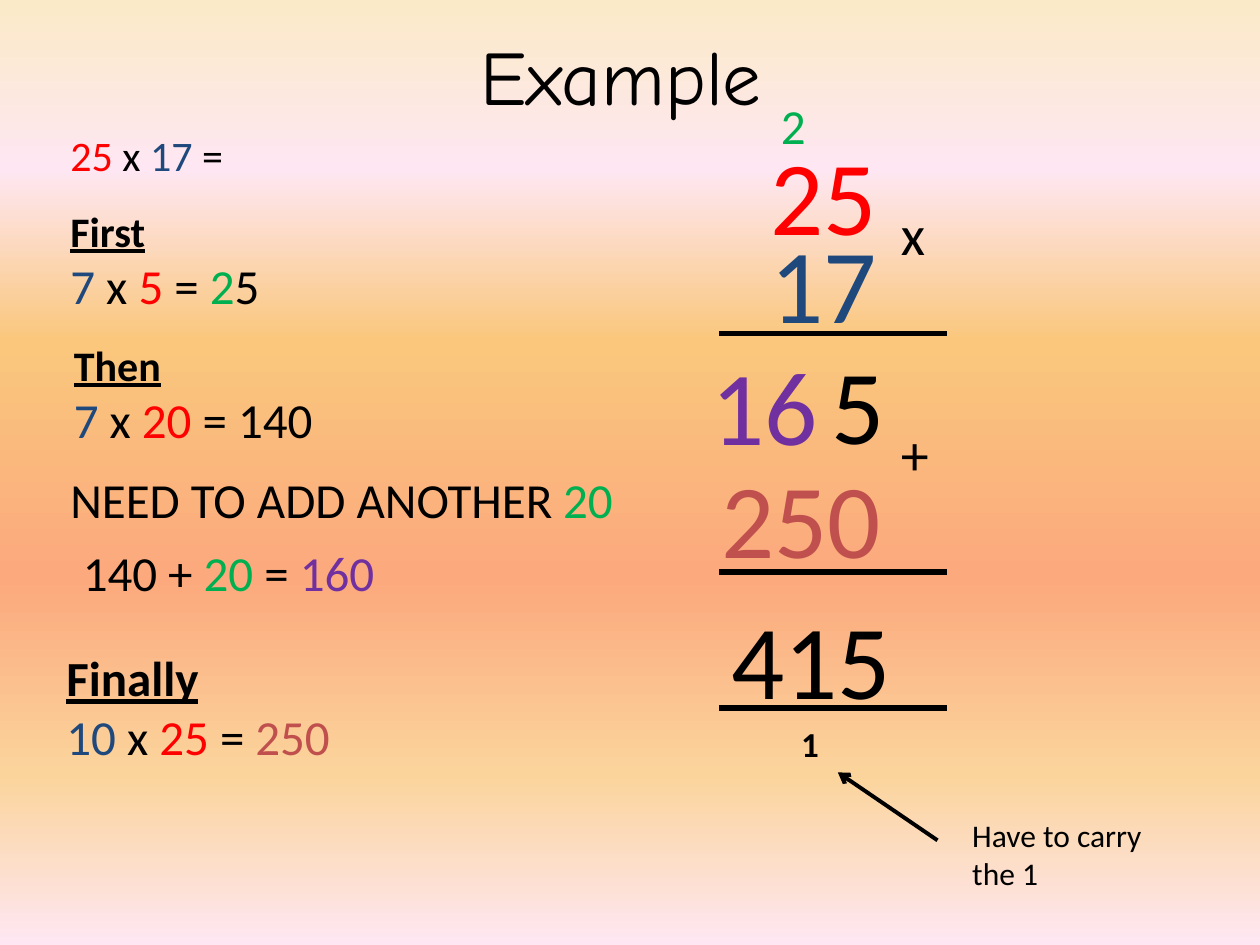
from dataclasses import dataclass

from lxml import etree
from pptx import Presentation
from pptx.dml.color import RGBColor
from pptx.enum.shapes import MSO_CONNECTOR
from pptx.enum.text import MSO_ANCHOR, MSO_AUTO_SIZE, PP_ALIGN
from pptx.oxml.ns import qn
from pptx.slide import Slide
from pptx.util import Cm, Pt

STRAIGHT = MSO_CONNECTOR.STRAIGHT
MIDDLE = MSO_ANCHOR.MIDDLE
CENTER = PP_ALIGN.CENTER
GROW = MSO_AUTO_SIZE.SHAPE_TO_FIT_TEXT

FONT = "Calibri"
COLORS = {
    "black": "000000",
    "red": "FF0000",
    "blue": "1F497D",
    "green": "00B050",
    "purple": "7030A0",
    "brick": "C0504D",
}
SKY = {0: "FBEAC7", 18: "FEE7F2", 36: "FAC77D", 61: "FBA97D", 82: "FBD49C", 100: "FEE7F2"}


@dataclass
class Label:
    """Text box in cm; runs pair a text with a colour name."""
    left: float
    top: float
    width: float
    height: float
    size: int
    runs: list[tuple[str, str]]
    bold: bool = False
    head: str = ""
    head_size: int = 24


@dataclass
class Stroke:
    """Line in cm from (x1, y1) to (x2, y2)."""
    x1: float
    y1: float
    x2: float
    y2: float
    weight: float = 3
    arrow: bool = False


STEPS = [
    Label(1.17, 2.49, 3.99, 1.27, 24,
          [("25", "red"), (" x ", "black"), ("17", "blue"), (" =", "black")]),
    Label(1.17, 4.01, 5.99, 2.49, 28,
          [("7", "blue"), (" x ", "black"), ("5", "red"), (" = ", "black"),
           ("2", "green"), ("5", "black")], head="First"),
    Label(1.24, 6.71, 5.99, 2.49, 28,
          [("7", "blue"), (" x ", "black"), ("20", "red"), (" = 140", "black")],
          head="Then"),
    Label(1.17, 9.35, 11.73, 1.45, 28,
          [("NEED TO ADD ANOTHER ", "black"), ("20", "green")]),
    Label(1.42, 10.82, 7.29, 1.45, 28,
          [("140 + ", "black"), ("20", "green"), (" = ", "black"), ("160", "purple")]),
    Label(1.09, 12.93, 9.75, 2.64, 28,
          [("10", "blue"), (" x ", "black"), ("25 ", "red"), ("= ", "black"),
           ("250", "brick")], head="Finally", head_size=28),
]
SUM = [
    Label(15.49, 1.8, 2.21, 1.45, 28, [("2", "green")]),
    Label(15.29, 2.51, 3.2, 2.82, 60, [("25", "red")]),
    Label(15.29, 4.29, 3.2, 2.82, 60, [("17", "blue")]),
    Label(17.91, 3.89, 1.19, 1.63, 32, [("x", "black")]),
    Label(14.1, 6.73, 2.79, 2.82, 60, [("16", "purple")]),
    Label(16.51, 6.71, 2.01, 2.82, 60, [("5", "black")]),
    Label(17.91, 8.33, 3, 1.63, 32, [("+", "black")]),
    Label(14.3, 9.02, 9.6, 2.82, 60, [("250", "brick")]),
    Label(14.5, 11.86, 5.59, 2.82, 60, [("415", "black")]),
    Label(15.9, 14.45, 2.01, 1.12, 20, [("1", "black")], bold=True),
    Label(19.35, 16.33, 4.5, 1.8, 18, [("Have to carry the 1", "black")]),
]
RULES = [Stroke(14.5, y, 19.1, y) for y in (6.73, 11.53, 14.27)]
POINTER = Stroke(18.9, 16.94, 16.89, 15.57, 2.25, arrow=True)


def color(name: str) -> RGBColor:
    return RGBColor.from_string(COLORS[name])


def paint(slide: Slide) -> None:
    """Fill the background with the sky gradient, top to bottom."""
    fill = slide.background.fill
    fill.gradient()
    fill.gradient_angle = 270
    stops = slide.element.find(".//" + qn("a:gsLst"))
    for old in list(stops):
        stops.remove(old)
    for pos, tint in SKY.items():
        stop = etree.SubElement(stops, qn("a:gs"), pos=str(pos * 1000))
        etree.SubElement(stop, qn("a:srgbClr"), val=tint)


def add_title(slide: Slide, text: str) -> None:
    title = slide.shapes.title
    title.left, title.top = Cm(1.09), Cm(-0.08)
    title.width, title.height = Cm(22.86), Cm(3.18)
    frame = title.text_frame
    frame.text = text
    frame.vertical_anchor = MIDDLE
    para = frame.paragraphs[0]
    para.alignment = CENTER
    para.font.name, para.font.size = "Comic Neue", Pt(44)
    para.font.color.rgb = color("black")


def add_label(slide: Slide, label: Label) -> None:
    box = slide.shapes.add_textbox(
        Cm(label.left), Cm(label.top), Cm(label.width), Cm(label.height))
    frame = box.text_frame
    frame.word_wrap = True
    frame.auto_size = GROW
    para = frame.paragraphs[0]
    if label.head:
        para.text = label.head
        para.font.name, para.font.size = FONT, Pt(label.head_size)
        para.font.bold = para.font.underline = True
        para.font.color.rgb = color("black")
        para = frame.add_paragraph()
    para.font.name, para.font.size = FONT, Pt(label.size)
    para.font.bold = label.bold
    for text, tint in label.runs:
        run = para.add_run()
        run.text = text
        run.font.color.rgb = color(tint)


def add_stroke(slide: Slide, stroke: Stroke) -> None:
    line = slide.shapes.add_connector(
        STRAIGHT, Cm(stroke.x1), Cm(stroke.y1), Cm(stroke.x2), Cm(stroke.y2))
    line.line.color.rgb = color("black")
    line.line.width = Pt(stroke.weight)
    if stroke.arrow:
        etree.SubElement(line.get_or_add_ln(), qn("a:tailEnd"), type="arrow")
    etree.SubElement(line.element.spPr, qn("a:effectLst"))


def main() -> None:
    deck = Presentation()
    deck.slide_width, deck.slide_height = Cm(25.4), Cm(19.05)
    slide = deck.slides.add_slide(deck.slide_layouts[5])
    paint(slide)
    add_title(slide, "Example")
    for label in STEPS + SUM:
        add_label(slide, label)
    for stroke in [*RULES, POINTER]:
        add_stroke(slide, stroke)
    deck.save("out.pptx")


if __name__ == "__main__":
    main()
